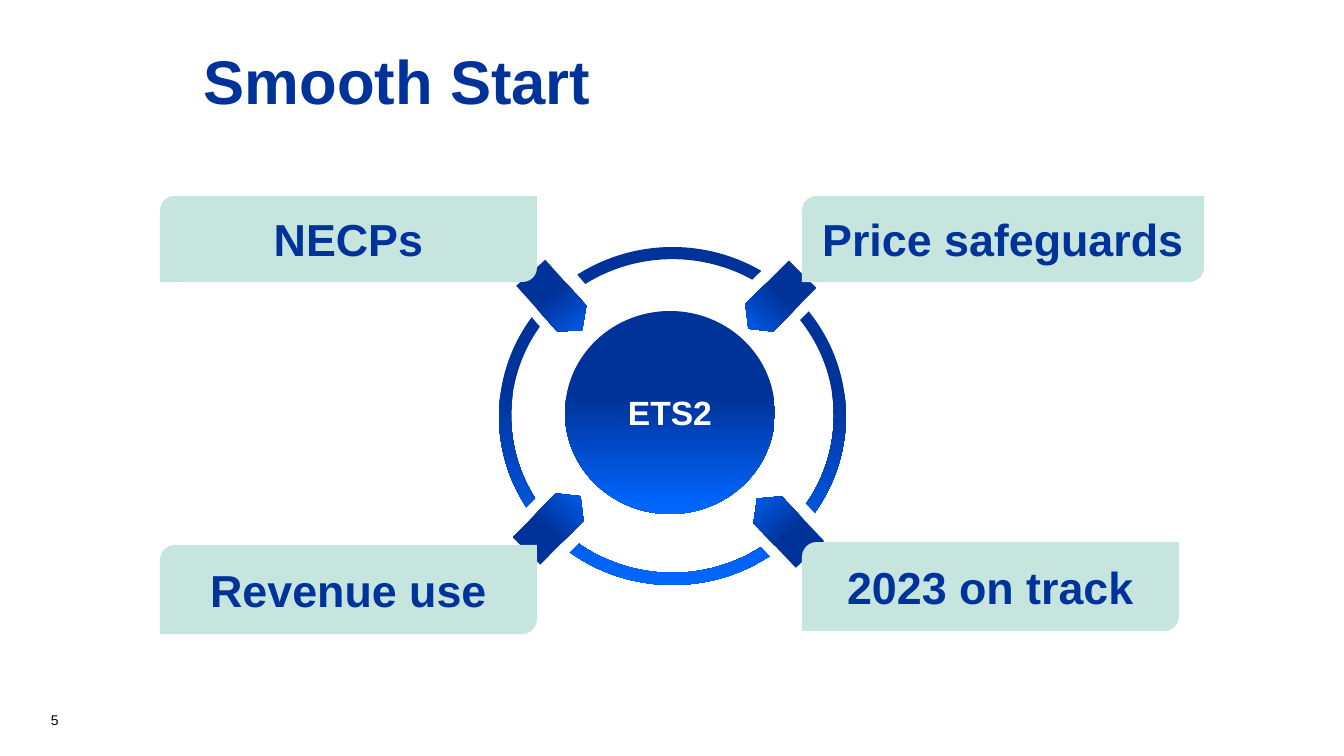
import pptx
import pptx.util
import pptx.dml.color
import pptx.enum.shapes
import pptx.enum.text

PX = 914400 / 100.8
SHAPE = pptx.enum.shapes.MSO_SHAPE
ALIGN = pptx.enum.text.PP_ALIGN
ANCHOR = pptx.enum.text.MSO_ANCHOR
COLORS = {"navy": "003399", "blue": "0066FF", "mint": "C6E5DF",
          "white": "FFFFFF", "black": "000000"}


def px(length):
    return pptx.util.Emu(round(length * PX))


def color(name):
    return pptx.dml.color.RGBColor.from_string(COLORS[name])


def write(shape, text, size, ink, bold=True, align=ALIGN.CENTER, anchor=ANCHOR.MIDDLE):
    frame = shape.text_frame
    frame.word_wrap = True
    frame.vertical_anchor = anchor
    para = frame.paragraphs[0]
    para.alignment = align
    span = para.add_run()
    span.text = text
    formats = {"name": "Arial", "size": pptx.util.Pt(size), "bold": bold}
    for name, value in formats.items():
        setattr(span.font, name, value)
    span.font.color.rgb = color(ink)
    return frame


def add_text(page, box, text, size, ink, **options):
    return write(page.shapes.add_textbox(*map(px, box)), text, size, ink,
                 align=ALIGN.LEFT, **options)


def add_shape(page, kind, box, fill=None, turn=0):
    """Place a borderless shape; without a fill colour it gets the blue gradient."""
    shape = page.shapes.add_shape(kind, *map(px, box))
    shape.shadow.inherit = False
    shape.line.fill.background()
    shape.rotation = turn
    if fill:
        shape.fill.solid()
        shape.fill.fore_color.rgb = color(fill)
    else:
        shape.fill.gradient()
        shape.fill.gradient_angle = 270
        stops = ((0.42, "navy"), (0.97, "blue"))
        for stop, (position, name) in zip(shape.fill.gradient_stops, stops):
            stop.position = position
            stop.color.rgb = color(name)
    return shape


def draw_title(page, box):
    frame = add_text(page, box, "Smooth Start", 44, "navy")
    frame.margin_left = px(111)
    frame.paragraphs[0].line_spacing = 0.9


def draw_wheel(page, box):
    left, top, width, height = box
    ring = add_shape(page, SHAPE.DONUT, box)
    ring.adjustments[0] = 0.036

    # Hub
    hub = add_shape(page, SHAPE.FLOWCHART_CONNECTOR, (left + 66, top + 64, 210, 203))
    write(hub, "ETS2", 24, "white")

    # White gaps cut into the ring: x, y, rotation
    gaps = ((-3, 250, 134.9), (5, 22, 49.1), (226, 19, 135.2), (232, 249, 46.8))
    for x, y, turn in gaps:
        add_shape(page, SHAPE.RECTANGLE, (left + x, top + y, 108, 62), "white", turn)

    # Arrows pointing at the hub: x, y, rotation
    arrows = ((38, 16, 318.1), (265, 241, 136.5), (257, 16, 44.9), (35, 238, 224.7))
    for x, y, turn in arrows:
        add_shape(page, SHAPE.FLOWCHART_OFFPAGE_CONNECTOR,
                  (left + x, top + y, 39, 77), turn=turn)


def draw_label(page, box, text):
    label = add_shape(page, SHAPE.ROUND_2_DIAG_RECTANGLE, box, "mint")
    write(label, text, 32, "navy")


def main():
    deck = pptx.Presentation()
    deck.slide_width, deck.slide_height = px(1344), px(756)
    page = deck.slides.add_slide(deck.slide_layouts[6])

    draw_title(page, (93, 40, 1159, 90))
    add_text(page, (41, 693, 302, 40), "5", 10, "black", bold=False, anchor=ANCHOR.BOTTOM)
    draw_wheel(page, (499, 247, 347, 338))

    # Corner labels
    labels = {"NECPs": (160, 196, 377, 86), "Price safeguards": (802, 196, 402, 86),
              "Revenue use": (160, 545, 377, 89), "2023 on track": (802, 542, 377, 89)}
    for text, box in labels.items():
        draw_label(page, box, text)

    deck.save("out.pptx")


if __name__ == "__main__":
    main()
